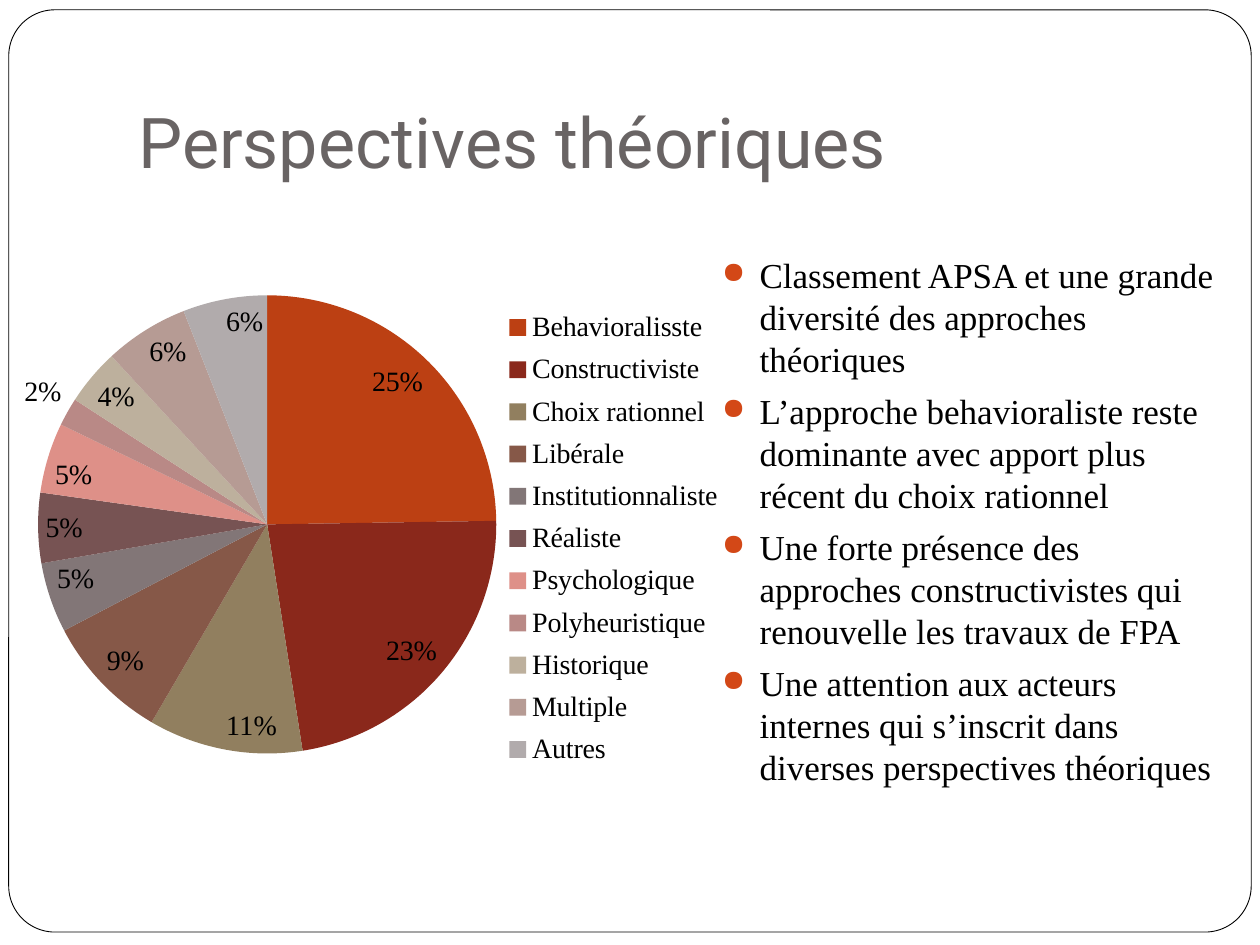
from lxml import etree
from pptx import Presentation
from pptx.chart import data as chart_data
from pptx.dml import color
from pptx.enum import chart as chart_enum, shapes, text
from pptx.oxml import ns
from pptx.util import Pt

SERIF = "Times New Roman"


def rgb(value):
    return color.RGBColor.from_string(value)


def put(parent, tag, **attributes):
    return etree.SubElement(parent, ns.qn(tag), attributes)


deck = Presentation()
deck.slide_width, deck.slide_height = Pt(720), Pt(540)
slide = deck.slides.add_slide(deck.slide_layouts[6])

frame = slide.shapes.add_shape(
    shapes.MSO_SHAPE.ROUNDED_RECTANGLE, Pt(5), Pt(5.6), Pt(710), Pt(527)
)
frame.adjustments[0] = 0.05
frame.shadow.inherit = False
frame.fill.solid()
frame.fill.fore_color.rgb = rgb("FFFFFF")
frame.line.color.rgb = rgb("000000")
frame.line.width = Pt(0.5)

heading = slide.shapes.add_textbox(Pt(72), Pt(21.6), Pt(612), Pt(90)).text_frame
heading.word_wrap = True
heading.vertical_anchor = text.MSO_ANCHOR.BOTTOM
heading.margin_bottom = Pt(7.2)
heading.text = "Perspectives théoriques"
heading_format = {"size": Pt(40), "name": "Roboto"}
for key, value in heading_format.items():
    setattr(heading.paragraphs[0].font, key, value)
heading.paragraphs[0].font.color.rgb = rgb("696464")

findings = [
    "Classement APSA et une grande diversité des approches théoriques",
    "L’approche behavioraliste reste dominante avec apport plus récent du choix rationnel",
    "Une forte présence des approches constructivistes qui renouvelle les travaux de FPA",
    "Une attention aux acteurs internes qui s’inscrit dans diverses perspectives théoriques",
]
body = slide.shapes.add_textbox(Pt(405.4), Pt(116.6), Pt(295.2), Pt(360)).text_frame
body.word_wrap = True
body.margin_top = Pt(28)
body.text = "\n".join(findings)
finding_format = {"space_before": Pt(5.8), "line_spacing": Pt(24)}
for finding in body.paragraphs:
    for key, value in finding_format.items():
        setattr(finding, key, value)
    finding.font.size = Pt(20)
    finding.font.name = SERIF
    finding.font.color.rgb = rgb("000000")
    properties = finding._p.get_or_add_pPr()
    properties.set("marL", str(Pt(21.6)))
    properties.set("indent", str(-Pt(21.6)))
    bullet_color = etree.Element(ns.qn("a:buClr"))
    put(bullet_color, "a:srgbClr", val="D34817")
    properties.insert_element_before(bullet_color, "a:defRPr")
    for tag, attributes in (
        ("a:buSzPct", {"val": "85000"}),
        ("a:buChar", {"char": "●"}),
    ):
        properties.insert_element_before(
            etree.Element(ns.qn(tag), attributes), "a:defRPr"
        )

perspectives = [
    ("Behavioralisste", 25, "BC4013"),
    ("Constructiviste", 23, "8A281B"),
    ("Choix rationnel", 11, "917F5F"),
    ("Libérale", 9, "865848"),
    ("Institutionnaliste", 5, "827677"),
    ("Réaliste", 5, "775353"),
    ("Psychologique", 5, "DE9088"),
    ("Polyheuristique", 2, "B98986"),
    ("Historique", 4, "BDB09D"),
    ("Multiple", 6, "B69B94"),
    ("Autres", 6, "B1ABAC"),
]
names, shares, slice_colors = zip(*perspectives)
survey = chart_data.CategoryChartData()
survey.categories = names
survey.add_series("Series 1", shares)
pie = slide.shapes.add_chart(
    chart_enum.XL_CHART_TYPE.PIE, Pt(-20.2), Pt(139.7), Pt(455), Pt(323.3), survey
).chart
pie.has_title = False
pie.font.name = SERIF
pie.font.size = Pt(16)
pie.font.color.rgb = rgb("000000")
pie.has_legend = True
pie.legend.position = chart_enum.XL_LEGEND_POSITION.RIGHT
pie.legend.include_in_layout = False
pie.legend.font.size = Pt(16)
pie.plots[0].vary_by_categories = True

slices = pie.plots[0].series[0]
for index, slice_color in enumerate(slice_colors):
    fill = slices.points[index].format.fill
    fill.solid()
    fill.fore_color.rgb = rgb(slice_color)

label_format = {
    "show_percentage": True,
    "show_value": False,
    "number_format": "0%",
    "number_format_is_linked": False,
    "position": chart_enum.XL_LABEL_POSITION.INSIDE_END,
}
for key, value in label_format.items():
    setattr(slices.data_labels, key, value)
slices.data_labels.font.size = Pt(16)
smallest = slices.points[shares.index(min(shares))].data_label
smallest.font.size = Pt(16)
smallest.position = chart_enum.XL_LABEL_POSITION.OUTSIDE_END
for tag, shown in (("showVal", "0"), ("showPercent", "1")):
    for flag in pie._chartSpace.xpath(f".//c:dLbl/c:{tag}"):
        flag.set("val", shown)

plot_area = pie._chartSpace.xpath(".//c:plotArea")[0]
legend = pie._chartSpace.xpath(".//c:legend")[0]
for area, index, box in (
    (plot_area, 0, {"x": 0.09, "y": 0.09, "w": 0.58, "h": 0.81}),
    (legend, 1, {"x": 0.68, "y": 0.1, "w": 0.27, "h": 0.84}),
):
    for previous in area.findall(ns.qn("c:layout")):
        area.remove(previous)
    layout = etree.Element(ns.qn("c:layout"))
    area.insert(index, layout)
    manual = put(layout, "c:manualLayout")
    if area is plot_area:
        put(manual, "c:layoutTarget", val="inner")
    for axis in "xy":
        put(manual, f"c:{axis}Mode", val="edge")
    for side, fraction in box.items():
        put(manual, f"c:{side}", val=str(fraction))

deck.save("out.pptx")
